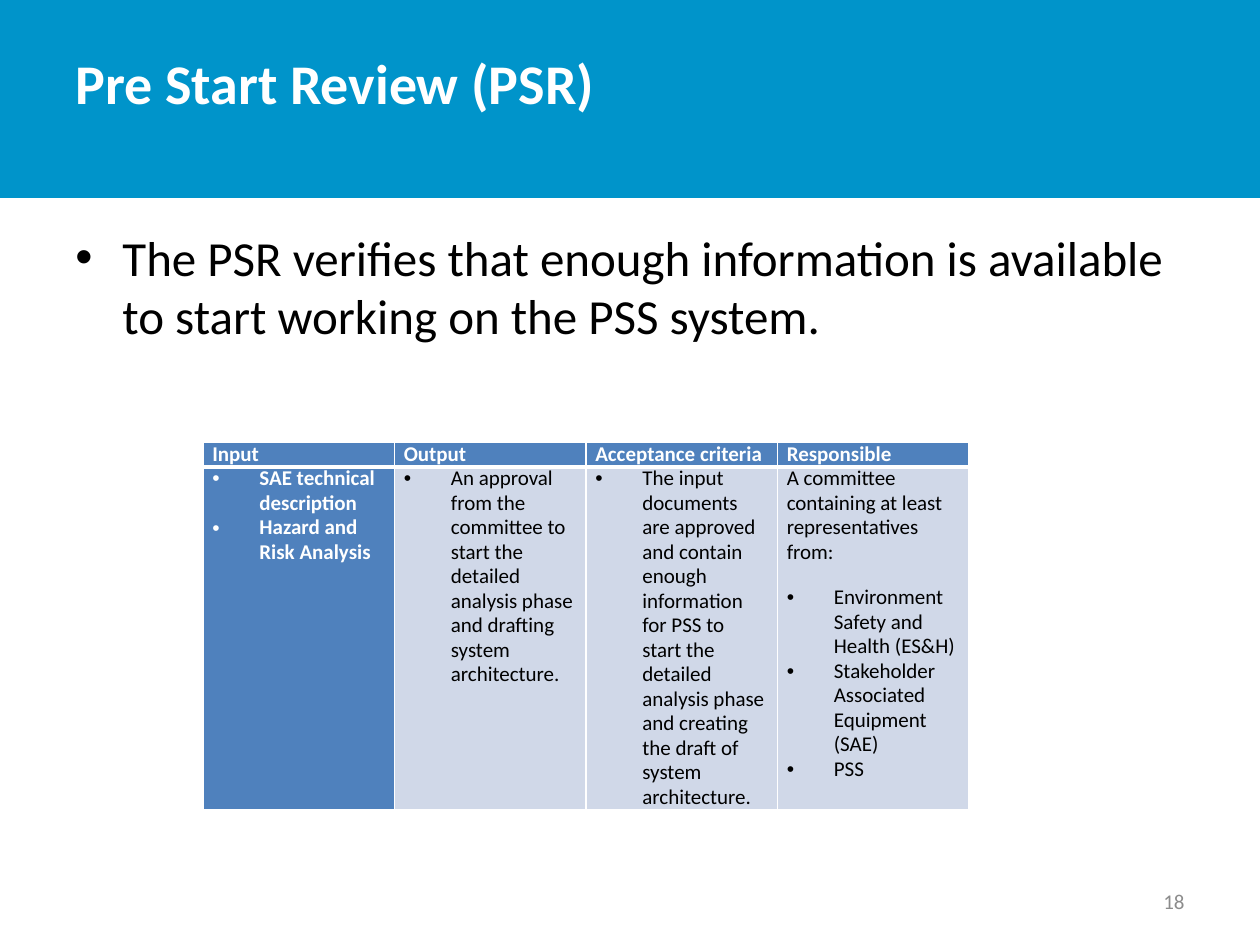
"""Build the Pre Start Review slide with its input, output and criteria table."""
from lxml import etree
from pptx import Presentation
from pptx.dml.color import RGBColor
from pptx.enum.shapes import MSO_SHAPE
from pptx.enum.text import MSO_ANCHOR, PP_ALIGN
from pptx.oxml.ns import qn
from pptx.util import Cm, Pt

RECTANGLE = MSO_SHAPE.RECTANGLE
TOP, MIDDLE = MSO_ANCHOR.TOP, MSO_ANCHOR.MIDDLE
LEFT, RIGHT = PP_ALIGN.LEFT, PP_ALIGN.RIGHT

BANNER_BLUE = RGBColor(0x00, 0x94, 0xCA)
HEADER_BLUE = RGBColor(0x4F, 0x81, 0xBD)
PALE_BLUE = RGBColor(0xD0, 0xD8, 0xE8)
WHITE = RGBColor(0xFF, 0xFF, 0xFF)
BLACK = RGBColor(0x00, 0x00, 0x00)
GREY = RGBColor(0x8C, 0x8C, 0x8C)

FONT = "Calibri"
INDENT = Cm(0.95)
TITLE = "Pre Start Review (PSR)"
STATEMENT = ("The PSR verifies that enough information is available "
             "to start working on the PSS system.")
PAGE_NUMBER = "18"
REVIEW = [
    {"heading": "Input", "intro": None,
     "points": ["SAE technical description", "Hazard and Risk Analysis"]},
    {"heading": "Output", "intro": None,
     "points": ["An approval from the committee to start the detailed analysis "
                "phase and drafting system architecture."]},
    {"heading": "Acceptance criteria", "intro": None,
     "points": ["The input documents are approved and contain enough information "
                "for PSS to start the detailed analysis phase and creating the "
                "draft of system architecture."]},
    {"heading": "Responsible",
     "intro": "A committee containing at least representatives from:",
     "points": ["Environment Safety and Health (ES&H)",
                "Stakeholder Associated Equipment (SAE)", "PSS"]},
]
COLUMN_WIDTH = Cm(3.86)
ROW_HEIGHTS = [Cm(0.49), Cm(6.91)]


def style(paragraph, size, color, bold=False):
    font = paragraph.font
    font.name, font.size, font.bold = FONT, Pt(size), bold
    font.color.rgb = color


def add_bullet(paragraph):
    properties = paragraph._p.get_or_add_pPr()
    properties.set("marL", str(INDENT))
    properties.set("indent", str(-INDENT))
    etree.SubElement(properties, qn("a:buFont"), typeface="Arial")
    etree.SubElement(properties, qn("a:buChar"), char="•")


def add_text(slide, text, place, size, color, bold=False, bullet=False,
             anchor=TOP, align=LEFT, top_margin=Cm(0.13)):
    frame = slide.shapes.add_textbox(*map(Cm, place)).text_frame
    frame.word_wrap = True
    frame.vertical_anchor = anchor
    frame.margin_top = top_margin
    paragraph = frame.paragraphs[0]
    paragraph.text = text
    paragraph.alignment = align
    if bullet:
        add_bullet(paragraph)
    style(paragraph, size, color, bold)


def add_borders(cell, widths):
    properties = cell._tc.get_or_add_tcPr()
    for position, (side, width) in enumerate(widths.items()):
        line = etree.Element(qn(f"a:ln{side}"), w=str(Pt(width)))
        fill = etree.SubElement(line, qn("a:solidFill"))
        etree.SubElement(fill, qn("a:srgbClr"), val=str(WHITE))
        properties.insert(position, line)


def fill_cell(cell, entries, fill, color, bold, borders):
    cell.fill.solid()
    cell.fill.fore_color.rgb = fill
    cell.margin_left = cell.margin_right = Cm(0.19)
    cell.margin_top = cell.margin_bottom = 0
    frame = cell.text_frame
    for index, (text, bullet) in enumerate(entries):
        paragraph = frame.add_paragraph() if index else frame.paragraphs[0]
        paragraph.text = text
        if bullet:
            add_bullet(paragraph)
        paragraph.line_spacing = Pt(14)
        paragraph.space_after = Pt(0 if bullet else 12)
        style(paragraph, 12, color, bold)
    add_borders(cell, borders)


def add_review_table(slide):
    table = slide.shapes.add_table(
        len(ROW_HEIGHTS), len(REVIEW), Cm(4.09), Cm(8.92),
        COLUMN_WIDTH * len(REVIEW), sum(ROW_HEIGHTS)).table
    table.horz_banding = False
    for row, height in zip(table.rows, ROW_HEIGHTS):
        row.height = height
    for index, topic in enumerate(REVIEW):
        table.columns[index].width = COLUMN_WIDTH
        entries = [(topic["intro"], False)] if topic["intro"] else []
        entries += [(point, True) for point in topic["points"]]
        first = index == 0
        fill_cell(table.cell(0, index), [(topic["heading"], False)],
                  HEADER_BLUE, WHITE, True, {"L": 1, "R": 1, "T": 1, "B": 3})
        fill_cell(table.cell(1, index), entries,
                  HEADER_BLUE if first else PALE_BLUE,
                  WHITE if first else BLACK, first,
                  {"L": 1, "R": 1, "T": 3, "B": 1})


def main():
    deck = Presentation()
    deck.slide_width, deck.slide_height = Cm(25.4), Cm(19.05)
    slide = deck.slides.add_slide(deck.slide_layouts[6])

    banner = slide.shapes.add_shape(RECTANGLE, 0, 0, deck.slide_width, Cm(3.99))
    banner.shadow.inherit = False
    banner.fill.solid()
    banner.fill.fore_color.rgb = BANNER_BLUE
    banner.line.fill.background()

    add_text(slide, TITLE, (1.27, 0.76, 19.84, 3.18), 32, WHITE, bold=True,
             top_margin=Cm(0.21))
    add_text(slide, STATEMENT, (1.27, 4.45, 22.86, 12.57), 28, BLACK, bullet=True)
    add_text(slide, PAGE_NUMBER, (18.21, 17.65, 5.92, 1.02), 12, GREY,
             anchor=MIDDLE, align=RIGHT)
    add_review_table(slide)
    deck.save("out.pptx")


if __name__ == "__main__":
    main()
